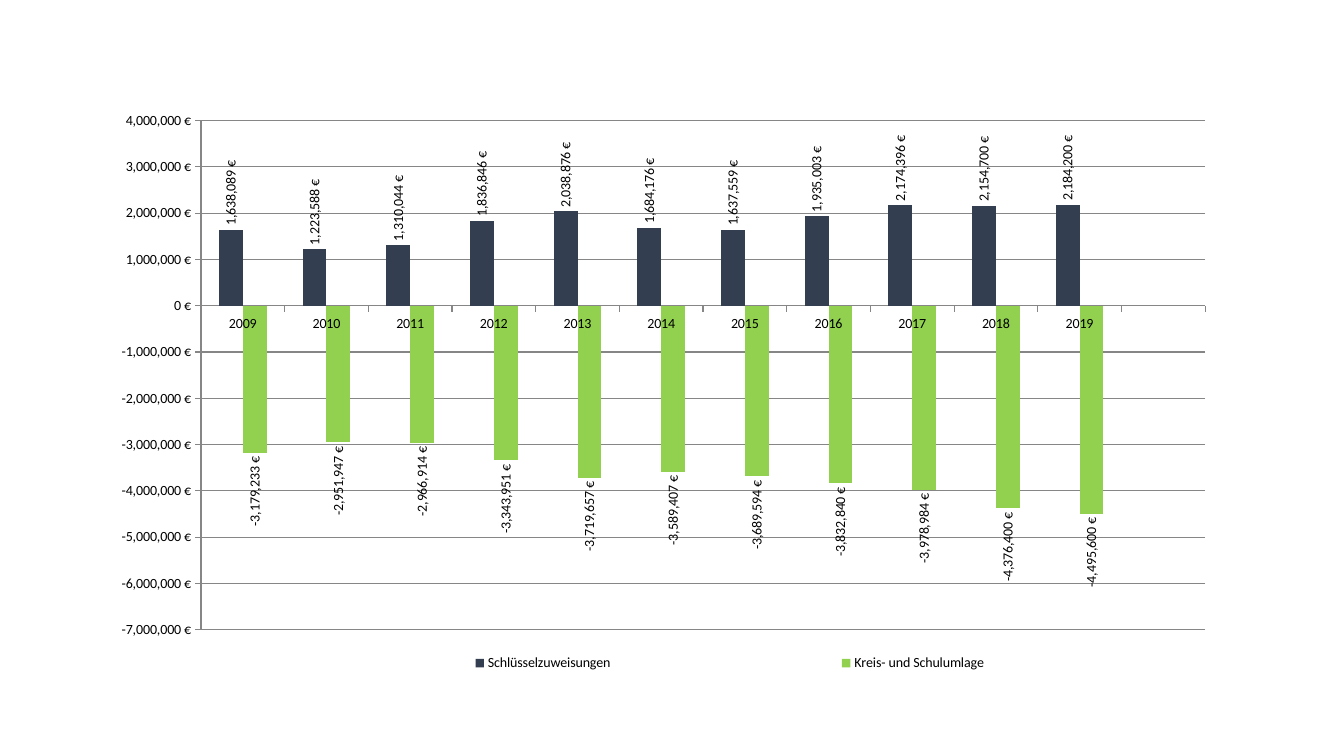
from lxml.etree import SubElement
from pptx import Presentation
from pptx.chart.data import CategoryChartData
from pptx.dml.color import RGBColor
from pptx.enum.chart import (XL_CHART_TYPE, XL_LABEL_POSITION,
                             XL_LEGEND_POSITION, XL_TICK_LABEL_POSITION,
                             XL_TICK_MARK)
from pptx.oxml import parse_xml
from pptx.oxml.ns import nsdecls, qn
from pptx.util import Inches, Pt

COLOURS = {"grants": "333F50", "levies": "92D050",
           "text": "000000", "grid": "868686"}
EURO_FORMAT = '#,##0\\ "€"'
YEARS = [str(year) for year in range(2009, 2020)] + [""]
GRANTS = [1638089, 1223588, 1310044, 1836846, 2038876, 1684176,
          1637559, 1935003, 2174396, 2154700, 2184200, None]
LEVIES = [-3179233, -2951947, -2966914, -3343951, -3719657, -3589407,
          -3689594, -3832840, -3978984, -4376400, -4495600, None]


def rgb(name):
    return RGBColor.from_string(COLOURS[name])


def style_font(font):
    font.size = Pt(10)
    font.name = "Calibri"
    font.color.rgb = rgb("text")


def manual_layout(box, inner=False):
    layout = parse_xml(f"<c:layout {nsdecls('c')}/>")
    manual = SubElement(layout, qn("c:manualLayout"))
    settings = [("layoutTarget", "inner")] if inner else []
    settings += [("xMode", "edge"), ("yMode", "edge")]
    settings += zip("xywh", box)
    for tag, value in settings:
        SubElement(manual, qn(f"c:{tag}")).set("val", str(value))
    return layout


def style_axes(chart):
    for axis in (chart.category_axis, chart.value_axis):
        axis.major_tick_mark = XL_TICK_MARK.OUTSIDE
        axis.minor_tick_mark = XL_TICK_MARK.NONE
        axis.tick_label_position = XL_TICK_LABEL_POSITION.NEXT_TO_AXIS
        axis.format.line.color.rgb = rgb("grid")
        axis.format.line.width = Pt(0.75)
        style_font(axis.tick_labels.font)
    amounts = chart.value_axis
    amounts.minimum_scale = -7_000_000
    amounts.maximum_scale = 4_000_000
    amounts.major_unit = 1_000_000
    amounts.has_major_gridlines = True
    amounts.major_gridlines.format.line.color.rgb = rgb("grid")
    amounts.major_gridlines.format.line.width = Pt(0.75)
    amounts.tick_labels.number_format = EURO_FORMAT
    amounts.tick_labels.number_format_is_linked = False


def style_series(series, colour):
    series.invert_if_negative = False
    series.format.fill.solid()
    series.format.fill.fore_color.rgb = rgb(colour)
    labels = series.data_labels
    labels.show_value = True
    labels.number_format = EURO_FORMAT
    labels.number_format_is_linked = False
    labels.position = XL_LABEL_POSITION.OUTSIDE_END
    style_font(labels.font)
    direction = labels._element.find(f"{qn('c:txPr')}/{qn('a:bodyPr')}")
    direction.set("rot", "-5400000")
    direction.set("vert", "horz")


def style_legend(chart, box):
    chart.has_legend = True
    legend = chart.legend
    legend.position = XL_LEGEND_POSITION.RIGHT
    legend.include_in_layout = False
    style_font(legend.font)
    for layout in legend._element.findall(qn("c:layout")):
        legend._element.remove(layout)
    legend._element.find(qn("c:legendPos")).addnext(manual_layout(box))


def place_plot(chart, box):
    plot_area = chart._chartSpace.chart.plotArea
    for layout in plot_area.findall(qn("c:layout")):
        plot_area.remove(layout)
    plot_area.insert(0, manual_layout(box, inner=True))


def add_budget_chart(slide, left, top, width, height):
    budget = CategoryChartData(number_format=EURO_FORMAT)
    budget.categories = YEARS
    budget.add_series("Schlüsselzuweisungen", GRANTS)
    budget.add_series("Kreis- und Schulumlage", LEVIES)
    chart = slide.shapes.add_chart(XL_CHART_TYPE.COLUMN_CLUSTERED,
                                   left, top, width, height, budget).chart
    chart.has_title = False
    style_font(chart.font)
    columns = chart.plots[0]
    columns.vary_by_categories = False
    columns.gap_width = 150
    columns.overlap = 0
    style_axes(chart)
    for series, colour in zip(columns.series, ("grants", "levies")):
        style_series(series, colour)
    style_legend(chart, (0.13, 0.93, 0.83, 0.07))
    place_plot(chart, (0.089, 0.024, 0.866, 0.883))


def main():
    deck = Presentation()
    deck.slide_width = Inches(13.33)
    deck.slide_height = Inches(7.5)
    slide = deck.slides.add_slide(deck.slide_layouts[6])
    add_budget_chart(slide, Inches(0.97), Inches(1.06),
                     Inches(11.5), Inches(5.72))
    deck.save("out.pptx")


if __name__ == "__main__":
    main()
